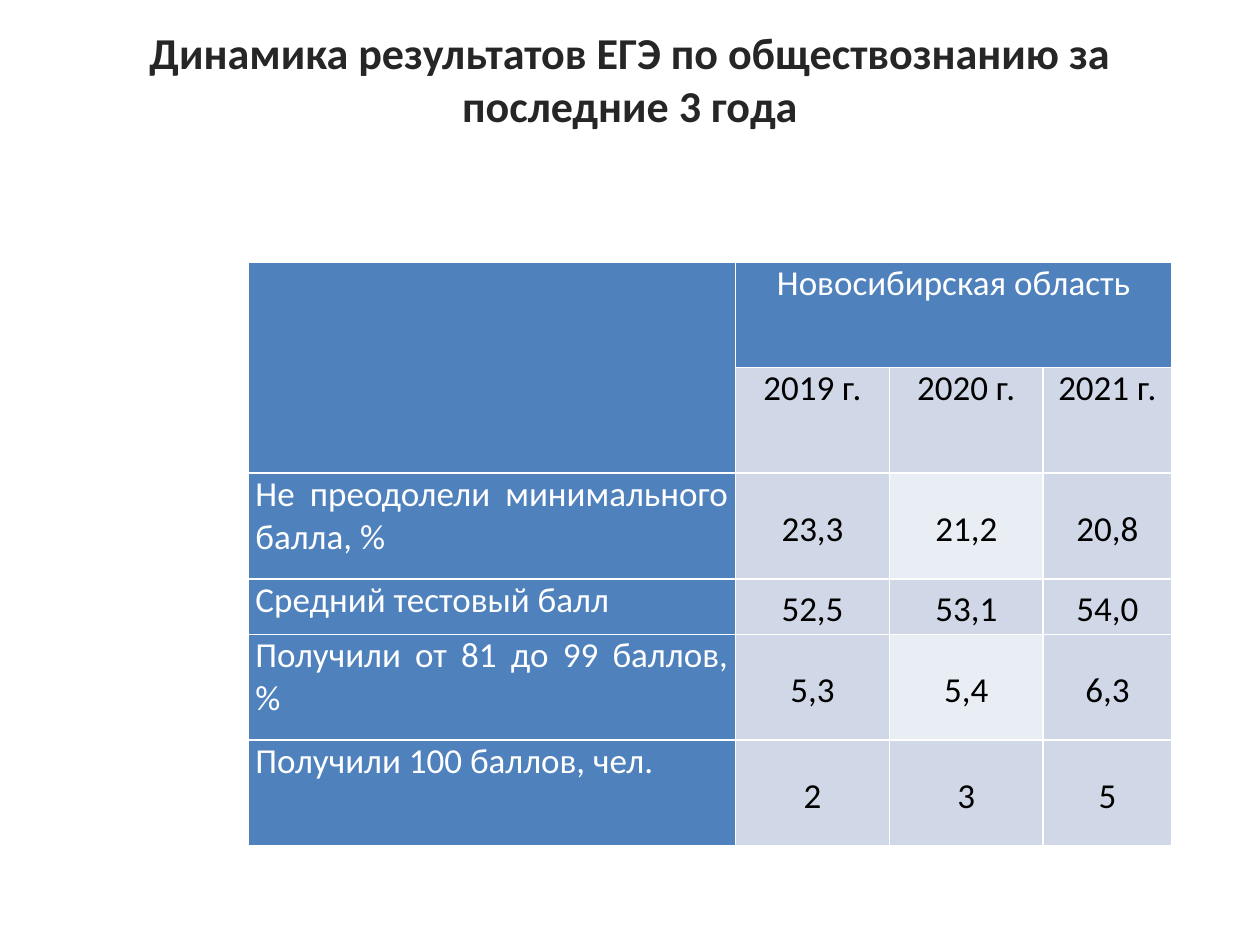
from lxml import etree
from pptx import Presentation
from pptx import util as u
from pptx.dml.color import RGBColor
from pptx.enum import text
from pptx.oxml import ns

COLORS = {
    "title": "262626",
    "header": "4F81BD",
    "band": "D0D8E8",
    "light": "E9EDF4",
    "white": "FFFFFF",
    "black": "000000",
}
FONT = "Calibri"
YEARS = ["2019 г.", "2020 г.", "2021 г."]
RESULTS = [
    ("Не преодолели минимального балла, %", ["23,3", "21,2", "20,8"]),
    ("Средний тестовый балл", ["52,5", "53,1", "54,0"]),
    ("Получили от 81 до 99 баллов, %", ["5,3", "5,4", "6,3"]),
    ("Получили 100 баллов, чел.", ["2", "3", "5"]),
]
COLUMN_WIDTHS = [9.83, 3.1, 3.1, 2.59]
ROW_HEIGHTS = [2.13, 2.13, 2.13, 1.12, 2.13, 2.13]


def color(name):
    return RGBColor.from_string(COLORS[name])


def write(paragraph, content, size, color_name, align, bold=False):
    paragraph.text = content
    paragraph.alignment = align
    for run in paragraph.runs:
        run.font.name = FONT
        run.font.size = u.Pt(size)
        run.font.bold = bold
        run.font.color.rgb = color(color_name)


def add_title(slide, left, top, width, height):
    shape = slide.shapes.add_textbox(u.Cm(left), u.Cm(top), u.Cm(width), u.Cm(height))
    frame = shape.text_frame
    frame.word_wrap = True
    frame.vertical_anchor = text.MSO_ANCHOR.MIDDLE
    frame.margin_top = 0
    frame.margin_bottom = u.Cm(1.55)
    write(frame.paragraphs[0], "Динамика результатов ЕГЭ по обществознанию за последние 3 года",
          25.2, "title", text.PP_ALIGN.CENTER, bold=True)


def style_cell(cell, fill_name):
    cell.margin_left = cell.margin_right = u.Cm(0.15)
    cell.margin_top = cell.margin_bottom = 0
    properties = cell._tc.get_or_add_tcPr()
    for side in ("L", "R", "T", "B"):
        line = etree.SubElement(properties, ns.qn(f"a:ln{side}"), w=str(u.Pt(1)))
        fill = etree.SubElement(line, ns.qn("a:solidFill"))
        etree.SubElement(fill, ns.qn("a:srgbClr"), val=COLORS["white"])
    cell.fill.solid()
    cell.fill.fore_color.rgb = color(fill_name)


def fill_cell(cell, content, color_name, align):
    write(cell.text_frame.paragraphs[0], content, 20, color_name, align)


def add_results_table(slide, left, top):
    shape = slide.shapes.add_table(
        len(ROW_HEIGHTS), len(COLUMN_WIDTHS), u.Cm(left), u.Cm(top),
        u.Cm(sum(COLUMN_WIDTHS)), u.Cm(sum(ROW_HEIGHTS)))
    table = shape.table
    for column, width in zip(table.columns, COLUMN_WIDTHS):
        column.width = u.Cm(width)
    for row, height in zip(table.rows, ROW_HEIGHTS):
        row.height = u.Cm(height)

    for row_index in range(len(ROW_HEIGHTS)):
        for column_index in range(len(COLUMN_WIDTHS)):
            if row_index == 0 or column_index == 0:
                fill_name = "header"
            elif column_index == 2 and row_index in (2, 4):
                fill_name = "light"
            else:
                fill_name = "band"
            style_cell(table.cell(row_index, column_index), fill_name)

    table.cell(0, 0).merge(table.cell(1, 0))
    table.cell(0, 1).merge(table.cell(0, 3))
    center = text.PP_ALIGN.CENTER
    fill_cell(table.cell(0, 1), "Новосибирская область", "white", center)
    for column_index, year in enumerate(YEARS, start=1):
        fill_cell(table.cell(1, column_index), year, "black", center)
    for row_index, (label, values) in enumerate(RESULTS, start=2):
        fill_cell(table.cell(row_index, 0), label, "white", text.PP_ALIGN.JUSTIFY)
        for column_index, value in enumerate(values, start=1):
            cell = table.cell(row_index, column_index)
            cell.vertical_anchor = text.MSO_ANCHOR.MIDDLE
            fill_cell(cell, value, "black", center)
            cell.text_frame.paragraphs[0].line_spacing = 1.15


def main():
    presentation = Presentation()
    presentation.slide_width = u.Cm(25.4)
    presentation.slide_height = u.Cm(19.05)
    slide = presentation.slides.add_slide(presentation.slide_layouts[6])
    add_title(slide, 1.27, 0.76, 22.86, 3.18)
    add_results_table(slide, 5, 5.28)
    presentation.save("out.pptx")


if __name__ == "__main__":
    main()
